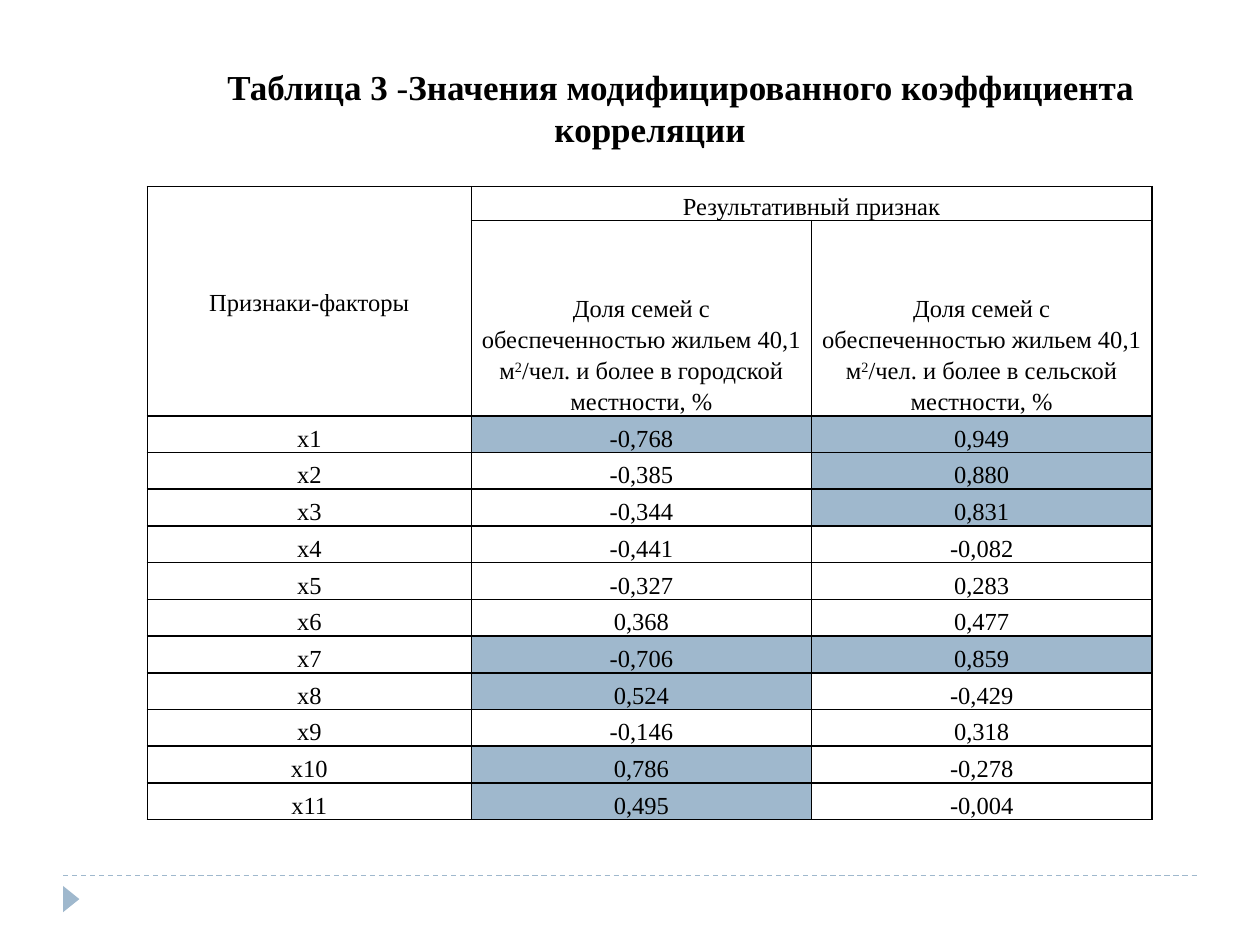
from lxml.etree import SubElement
from pptx import Presentation
from pptx.dml.color import RGBColor
from pptx.enum.dml import MSO_LINE
from pptx.enum.shapes import MSO_CONNECTOR, MSO_SHAPE
from pptx.enum.text import MSO_ANCHOR, PP_ALIGN
from pptx.oxml.ns import qn
from pptx.util import Cm, Pt

BLACK = RGBColor(0x00, 0x00, 0x00)
BLUE = RGBColor(0x9F, 0xB8, 0xCD)
STRONG_CORRELATION = 0.49
CORRELATIONS = [
    ("-0,768", "0,949"),
    ("-0,385", "0,880"),
    ("-0,344", "0,831"),
    ("-0,441", "-0,082"),
    ("-0,327", "0,283"),
    ("0,368", "0,477"),
    ("-0,706", "0,859"),
    ("0,524", "-0,429"),
    ("-0,146", "0,318"),
    ("0,786", "-0,278"),
    ("0,495", "-0,004"),
]
COLUMN_WIDTHS = [6.53, 6.86, 6.86]
ROW_HEIGHTS = [0.64, 3.94] + [0.74] * len(CORRELATIONS)


def set_attributes(target, values):
    for name, value in values.items():
        setattr(target, name, value)


def is_strong(value):
    return abs(float(value.replace(",", "."))) >= STRONG_CORRELATION


def share_heading(area):
    return [
        ("Доля семей с обеспеченностью жильем 40,1 м", {}),
        ("2", {"superscript": True}),
        (f"/чел. и более в {area} местности, %", {}),
    ]


class SlideBuilder:
    font_name = "Times New Roman"
    cell_format = {
        "margin_left": Cm(0.17),
        "margin_right": Cm(0.17),
        "margin_top": 0,
        "margin_bottom": 0,
        "vertical_anchor": MSO_ANCHOR.BOTTOM,
    }

    def __init__(self, slide):
        self.slide = slide

    def add_runs(self, paragraph, runs, size):
        paragraph.alignment = PP_ALIGN.CENTER
        for text, values in runs:
            run = paragraph.add_run()
            run.text = text
            values = {"name": self.font_name, "size": Pt(size), **values}
            if values.pop("superscript", False):
                run.font._element.set("baseline", "30000")
            set_attributes(run.font, values)
            run.font.color.rgb = BLACK

    def add_title(self, left, top, width, height, runs):
        text_frame = self.slide.shapes.add_textbox(
            Cm(left), Cm(top), Cm(width), Cm(height)
        ).text_frame
        set_attributes(
            text_frame, {"word_wrap": True, "vertical_anchor": MSO_ANCHOR.MIDDLE}
        )
        paragraph = text_frame.paragraphs[0]
        paragraph._p.get_or_add_pPr().set("indent", str(Cm(1.24)))
        self.add_runs(paragraph, runs, 20)

    def add_dashed_line(self, left, right, top):
        connector = self.slide.shapes.add_connector(
            MSO_CONNECTOR.STRAIGHT, Cm(left), Cm(top), Cm(right), Cm(top)
        )
        set_attributes(
            connector.line, {"width": Pt(0.75), "dash_style": MSO_LINE.DASH}
        )
        connector.line.color.rgb = BLUE
        SubElement(connector._element.spPr, qn("a:effectLst"))

    def add_marker(self, left, top, width, height):
        shape = self.slide.shapes.add_shape(
            MSO_SHAPE.ISOSCELES_TRIANGLE, Cm(left), Cm(top), Cm(width), Cm(height)
        )
        shape.rotation = 90
        shape.shadow.inherit = False
        shape.fill.solid()
        shape.fill.fore_color.rgb = BLUE
        shape.line.fill.background()

    def add_table(self, left, top, column_widths, row_heights):
        table = self.slide.shapes.add_table(
            len(row_heights), len(column_widths), Cm(left), Cm(top),
            Cm(sum(column_widths)), Cm(sum(row_heights)),
        ).table
        set_attributes(table, {"first_row": False, "horz_banding": False})
        for column, width in zip(table.columns, column_widths):
            column.width = Cm(width)
        for row, height in zip(table.rows, row_heights):
            row.height = Cm(height)
        for cell in table.iter_cells():
            set_attributes(cell, self.cell_format)
            self.add_borders(cell)
            cell.fill.background()
        return table

    def add_borders(self, cell):
        properties = cell._tc.get_or_add_tcPr()
        for side in ("lnL", "lnR", "lnT", "lnB"):
            border = SubElement(properties, qn(f"a:{side}"), w=str(Pt(1)))
            fill = SubElement(border, qn("a:solidFill"))
            SubElement(fill, qn("a:srgbClr"), val=str(BLACK))

    def fill_cell(self, cell, runs, highlighted=False):
        paragraph = cell.text_frame.paragraphs[0]
        paragraph.line_spacing = 1.15
        self.add_runs(paragraph, runs, 14)
        if highlighted:
            cell.fill.solid()
            cell.fill.fore_color.rgb = BLUE


def main():
    presentation = Presentation()
    set_attributes(
        presentation, {"slide_width": Cm(25.4), "slide_height": Cm(19.05)}
    )
    builder = SlideBuilder(
        presentation.slides.add_slide(presentation.slide_layouts[6])
    )
    builder.add_dashed_line(1.27, 24.13, 17.65)
    builder.add_marker(1.17, 17.96, 0.53, 0.33)
    builder.add_title(2.59, 1.19, 21.03, 1.96, [
        ("Таблица 3", {"bold": True}),
        (" -", {"italic": True}),
        ("Значения модифицированного коэффициента корреляции", {"bold": True}),
    ])

    table = builder.add_table(2.97, 3.76, COLUMN_WIDTHS, ROW_HEIGHTS)
    factor_heading = table.cell(0, 0)
    factor_heading.merge(table.cell(1, 0))
    factor_heading.vertical_anchor = MSO_ANCHOR.MIDDLE
    table.cell(0, 1).merge(table.cell(0, 2))
    builder.fill_cell(factor_heading, [("Признаки-факторы", {})])
    builder.fill_cell(table.cell(0, 1), [("Результативный признак", {})])
    for column, area in enumerate(("городской", "сельской"), start=1):
        builder.fill_cell(table.cell(1, column), share_heading(area))
    for number, values in enumerate(CORRELATIONS, start=1):
        row = number + 1
        builder.fill_cell(table.cell(row, 0), [(f"x{number}", {})])
        for column, value in enumerate(values, start=1):
            builder.fill_cell(
                table.cell(row, column), [(value, {})], is_strong(value)
            )

    presentation.save("out.pptx")


if __name__ == "__main__":
    main()
